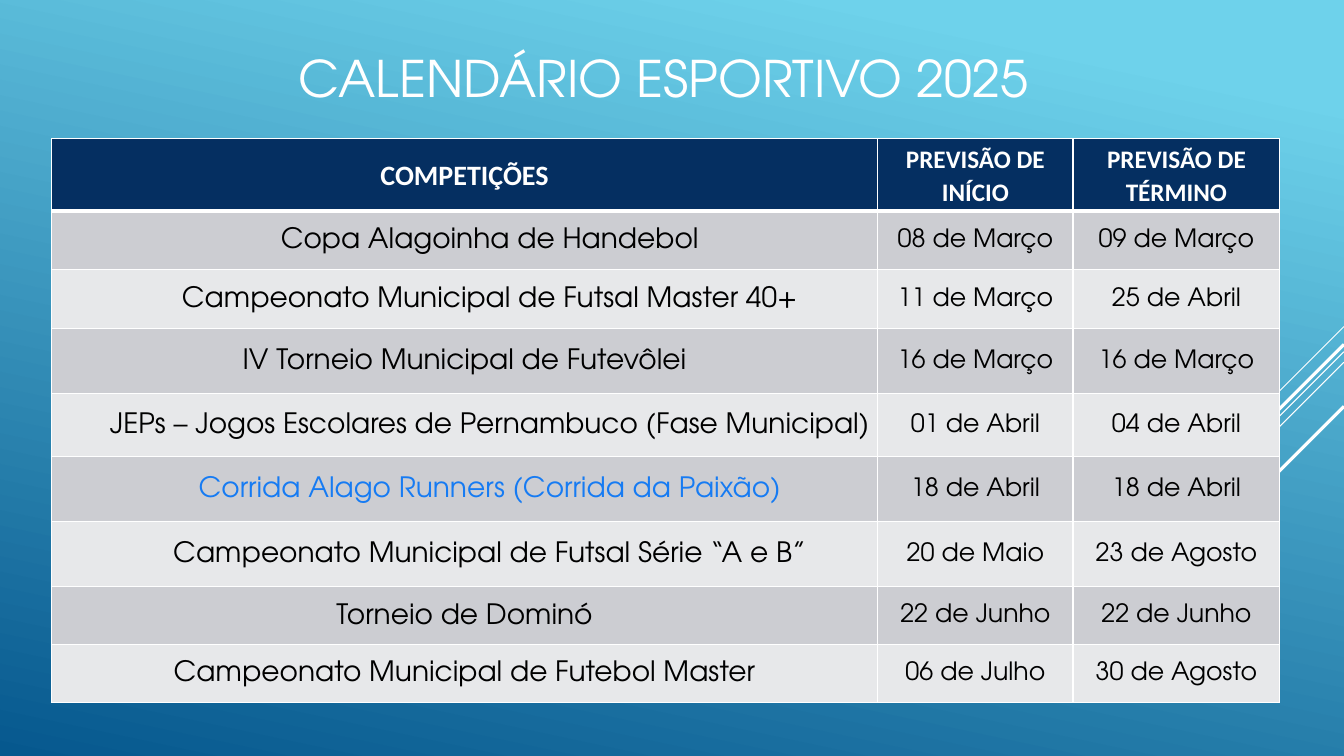
from lxml import etree
from pptx import Presentation
from pptx.dml.color import RGBColor
from pptx.enum.shapes import MSO_CONNECTOR
from pptx.enum.text import MSO_ANCHOR, PP_ALIGN
from pptx.oxml.ns import qn
from pptx.util import Pt

PX = 9525
STRAIGHT = MSO_CONNECTOR.STRAIGHT
MIDDLE = MSO_ANCHOR.MIDDLE
CENTER = PP_ALIGN.CENTER
WHITE, BLACK, NAVY, BLUE = "FFFFFF", "000000", "052F61", "167BF3"
BANDS = ["CCCDD2", "E7E8EA"]
HEADING_FONT, BODY_FONT = "Calibri", "TeX Gyre Adventor"


def rgb(color):
    return RGBColor.from_string(color)


def add_border(cell, side, points):
    """Append a white border; call before the cell is filled."""
    line = etree.SubElement(cell._tc.get_or_add_tcPr(), qn(f"a:ln{side}"), w=str(Pt(points)))
    fill = etree.SubElement(line, qn("a:solidFill"))
    etree.SubElement(fill, qn("a:srgbClr"), val=WHITE)


prs = Presentation()
prs.slide_width, prs.slide_height = 1280 * PX, 720 * PX
slide = prs.slides.add_slide(prs.slide_layouts[5])

background = slide.background.fill
background.gradient()
background.gradient_angle = 258
for stop, position, color in zip(background.gradient_stops, [0.1, 1], ["6ED2EB", "06588E"]):
    stop.position = position
    stop.color.rgb = rgb(color)

# Diagonal rays falling from the right edge: top, run, line width
rays = [(311, 96, 0.75), (335, 313, 0.75), (345, 199, 0.75), (328, 183, 2.25), (387, 134, 2.25)]
for top, run, width in rays:
    ray = slide.shapes.add_connector(
        STRAIGHT, 1280 * PX, top * PX, (1280 - run) * PX, (top + run) * PX)
    ray.line.color.rgb = rgb(WHITE)
    ray.line.width = Pt(width)
    etree.SubElement(ray._element.spPr, qn("a:effectLst"))

title = slide.shapes.title
title.left, title.top, title.width, title.height = 44 * PX, 29 * PX, 1176 * PX, 90 * PX
title.text_frame.text = "CALENDÁRIO ESPORTIVO 2025"
title.text_frame.vertical_anchor = MIDDLE
heading = title.text_frame.paragraphs[0]
heading.alignment = CENTER
heading.font.size = Pt(36)
heading.font.name = BODY_FONT
heading.font.color.rgb = rgb(WHITE)

events = [
    ("COMPETIÇÕES", "PREVISÃO DE INÍCIO", "PREVISÃO DE TÉRMINO"),
    ("Copa Alagoinha de Handebol", "08 de Março", "09 de Março"),
    ("Campeonato Municipal de Futsal Master 40+", "11 de Março", "25 de Abril"),
    ("IV Torneio Municipal de Futevôlei", "16 de Março", "16 de Março"),
    ("JEPs – Jogos Escolares de Pernambuco (Fase Municipal)", "01 de Abril", "04 de Abril"),
    ("Corrida Alago Runners (Corrida da Paixão)", "18 de Abril", "18 de Abril"),
    ("Campeonato Municipal de Futsal Série “A e B”", "20 de Maio", "23 de Agosto"),
    ("Torneio de Dominó", "22 de Junho", "22 de Junho"),
    ("Campeonato Municipal de Futebol Master", "06 de Julho", "30 de Agosto"),
]
column_widths = [787, 186, 197]
row_heights = [69, 56, 56, 62, 60, 62, 62, 55, 55]
indented_rows = {1, 2, 4, 5, 6}
highlighted_row = 5

calendar = slide.shapes.add_table(
    len(events), len(column_widths), 49 * PX, 132 * PX,
    sum(column_widths) * PX, sum(row_heights) * PX).table
for column, width in zip(calendar.columns, column_widths):
    column.width = width * PX

for r, event in enumerate(events):
    calendar.rows[r].height = row_heights[r] * PX
    is_header = r == 0
    for c, text in enumerate(event):
        is_name = c == 0
        cell = calendar.cell(r, c)
        add_border(cell, "L", 1)
        add_border(cell, "R", 1)
        add_border(cell, "T", 3 if r == 1 else 1)
        add_border(cell, "B", 3 if is_header else 1)
        cell.fill.solid()
        cell.fill.fore_color.rgb = rgb(NAVY if is_header else BANDS[(r - 1) % 2])
        cell.vertical_anchor = MIDDLE
        cell.margin_left = cell.margin_right = 7 * PX
        cell.margin_top = cell.margin_bottom = 0

        cell.text_frame.text = text
        entry = cell.text_frame.paragraphs[0]
        entry.alignment = CENTER
        if is_header or is_name:
            entry.line_spacing = 1.07
        if is_name and r in indented_rows:
            entry._p.get_or_add_pPr().set("marL", str(48 * PX))
        font = entry.runs[0].font
        font.name = HEADING_FONT if is_header else BODY_FONT
        font.size = Pt(20 if is_name else 18)
        font.bold = is_header
        if is_header:
            font.color.rgb = rgb(WHITE)
        else:
            font.color.rgb = rgb(BLUE if is_name and r == highlighted_row else BLACK)

prs.save("out.pptx")
